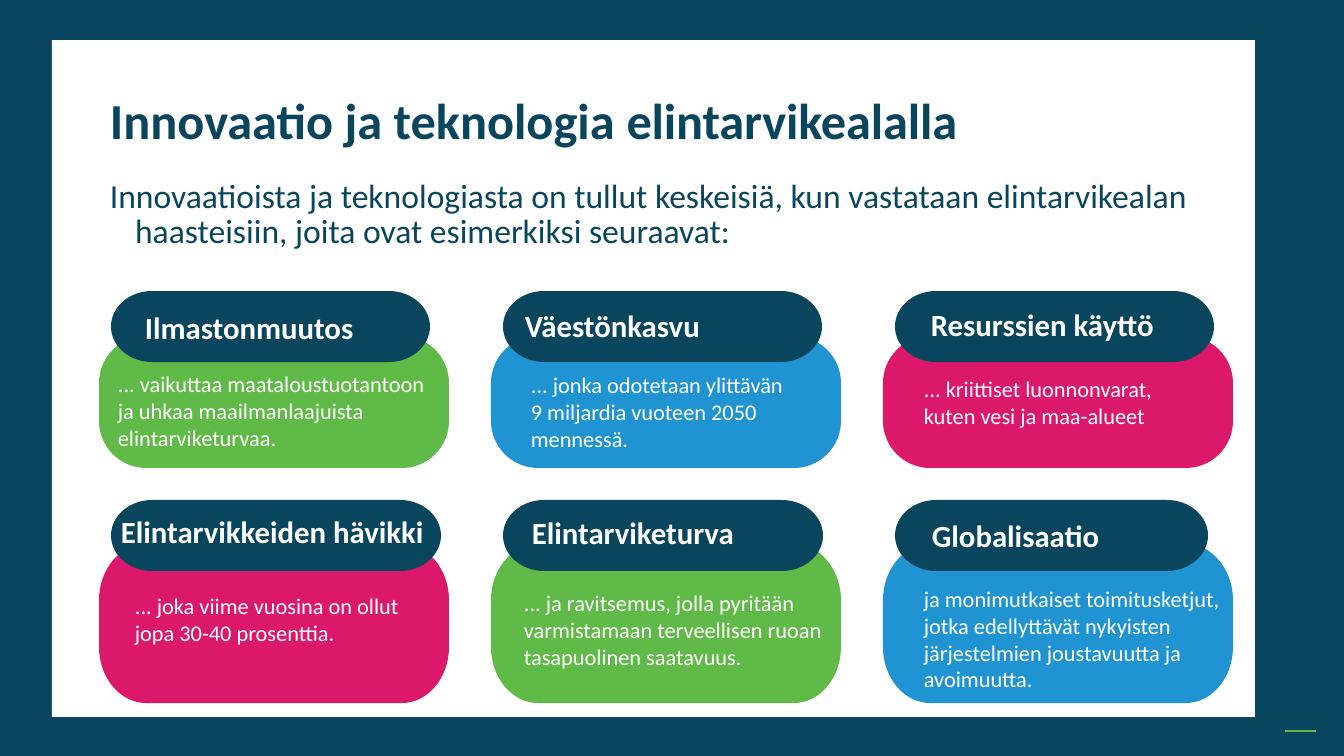
import pptx
import pptx.dml.color
import pptx.enum.shapes
import pptx.enum.text
import pptx.oxml
import pptx.oxml.ns
import pptx.util
from lxml import etree

# Content: lengths in px, 1344 x 756
NAVY, WHITE, GREEN, BLUE, PINK = "09465E", "FFFFFF", "60BA47", "2094D2", "DB186A"
TITLE = ["Innovaatio ja teknologia ", "elintarvikealalla"]
INTRO = ("Innovaatioista ja teknologiasta on tullut keskeisiä, kun vastataan "
         "elintarvikealan haasteisiin, joita ovat esimerkiksi seuraavat:")
# colour, pill width, heading, heading box, body, body box
TOPICS = [
    [
        (GREEN, 319, "Ilmastonmuutos", (135, 304, 276, 47),
         "... vaikuttaa maataloustuotantoon ja uhkaa maailmanlaajuista elintarviketurvaa.",
         (108, 365, 337, 92)),
        (BLUE, 319, "Väestönkasvu", (515, 302, 276, 47),
         "... jonka odotetaan ylittävän 9 miljardia vuoteen 2050 mennessä.",
         (521, 366, 287, 92)),
        (PINK, 319, "Resurssien käyttö", (921, 301, 251, 47),
         "... kriittiset luonnonvarat, kuten vesi ja maa-alueet",
         (914, 370, 287, 92)),
    ],
    [
        (PINK, 330, "Elintarvikkeiden hävikki", (111, 508, 336, 47),
         "... joka viime vuosina on ollut jopa 30-40 prosenttia.",
         (125, 587, 287, 65)),
        (GREEN, 320, "Elintarviketurva", (522, 509, 233, 47),
         "... ja ravitsemus, jolla pyritään varmistamaan terveellisen ruoan tasapuolinen saatavuus.",
         (514, 584, 327, 119)),
        (BLUE, 313, "Globalisaatio", (922, 512, 235, 47),
         "ja monimutkaiset toimitusketjut, jotka edellyttävät nykyisten järjestelmien "
         "joustavuutta ja avoimuutta.",
         (914, 580, 319, 119)),
    ],
]
# card top, card height, card corner height, pill top
ROWS = [(336, 132, 47, 291), (544, 159, 56, 500)]
CARD_LEFT, CARD_PITCH, CARD_W, CARD_CORNER_W = 99, 392, 350, 47
PILL_INSET, PILL_H, PILL_CORNER_W = 12, 71, 41
CURVE = 0.55  # pull of a quarter ellipse towards its corner

prs = pptx.Presentation()
SCALE = 12192000 / 1344
prs.slide_width, prs.slide_height = 12192000, 6858000
slide = prs.slides.add_slide(prs.slide_layouts[6])
shapes = slide.shapes
qn = pptx.oxml.ns.qn


def px(length):
    return round(length * SCALE)


def colour(value):
    return pptx.dml.color.RGBColor.from_string(value)


def paint(part, fill):
    part.shadow.inherit = False
    part.fill.solid()
    part.fill.fore_color.rgb = colour(fill)
    part.line.fill.background()


def panel(x, y, w, h, fill):
    paint(shapes.add_shape(pptx.enum.shapes.MSO_SHAPE.RECTANGLE,
                           px(x), px(y), px(w), px(h)), fill)


def rounded(x, y, w, h, rx, ry, fill):
    """Box whose corners are quarter ellipses of radii rx and ry."""
    corners = [(w, h), (0, h), (0, 0), (w, 0)]
    points = [(w, h - ry), (w - rx, h), (rx, h), (0, h - ry),
              (0, ry), (rx, 0), (w - rx, 0), (w, ry)]
    placed = [(px(x + across), px(y + down)) for across, down in points]
    outline = shapes.build_freeform(*placed[0], scale=1.0)
    outline.add_line_segments(placed[1:], close=True)
    part = outline.convert_to_shape()
    # Every other side becomes a curve around its corner
    sides = list(part._element.iter(qn("a:lnTo")))
    for index, corner in enumerate(corners):
        side = sides[2 * index]
        for place, point in enumerate(points[2 * index:2 * index + 2]):
            control = etree.Element(qn("a:pt"))
            for axis, end, tip in zip("xy", point, corner):
                control.set(axis, str(px(end + CURVE * (tip - end))))
            side.insert(place, control)
        side.tag = qn("a:cubicBezTo")
    paint(part, fill)


def write(box, runs, size, text_colour, bold=False, grow=True):
    frame = shapes.add_textbox(*map(px, box)).text_frame
    frame.word_wrap = True
    if grow:
        frame.auto_size = pptx.enum.text.MSO_AUTO_SIZE.SHAPE_TO_FIT_TEXT
    paragraph = frame.paragraphs[0]
    for words in runs:
        run = paragraph.add_run()
        run.text = words
        run.font.name = "Calibri"
        run.font.size = pptx.util.Pt(size)
        run.font.bold = bold
        run.font.color.rgb = colour(text_colour)
    return paragraph


# Frame and corner mark
panel(0, 0, 1344, 756, NAVY)
panel(52, 40, 1203, 677, WHITE)
corner_mark = shapes.add_connector(pptx.enum.shapes.MSO_CONNECTOR.STRAIGHT,
                                   px(1285), px(731), px(1316), px(731))
corner_mark.line.color.rgb = colour(GREEN)
corner_mark.line.width = pptx.util.Pt(1)
corner_mark._element.spPr.append(pptx.oxml.parse_xml(
    "<a:effectLst %s/>" % pptx.oxml.ns.nsdecls("a")))

# Title and introduction
title = write((100, 91, 1108, 89), TITLE, 36, NAVY, bold=True, grow=False)
title.line_spacing = 0.9
title.runs[1]._r.get_or_add_rPr().set("spc", "-10")
intro = write((100, 176, 1108, 64), [INTRO], 24, NAVY, grow=False)
intro.line_spacing = pptx.util.Pt(24.8)
hanging = pptx.util.Inches(0.25)
intro_props = intro._p.get_or_add_pPr()
intro_props.set("marL", str(hanging))
intro_props.set("indent", str(-hanging))

# Topic cards
for (card_top, card_h, corner_h, pill_top), topics in zip(ROWS, TOPICS):
    for column, (fill, pill_w, heading, heading_box, body, body_box) in enumerate(topics):
        left = CARD_LEFT + column * CARD_PITCH
        rounded(left, card_top, CARD_W, card_h, CARD_CORNER_W, corner_h, fill)
        rounded(left + PILL_INSET, pill_top, pill_w, PILL_H,
                PILL_CORNER_W, PILL_H / 2, NAVY)
        write(heading_box, [heading], 22, WHITE, bold=True)
        write(body_box, [body], 16, WHITE)

prs.save("out.pptx")
